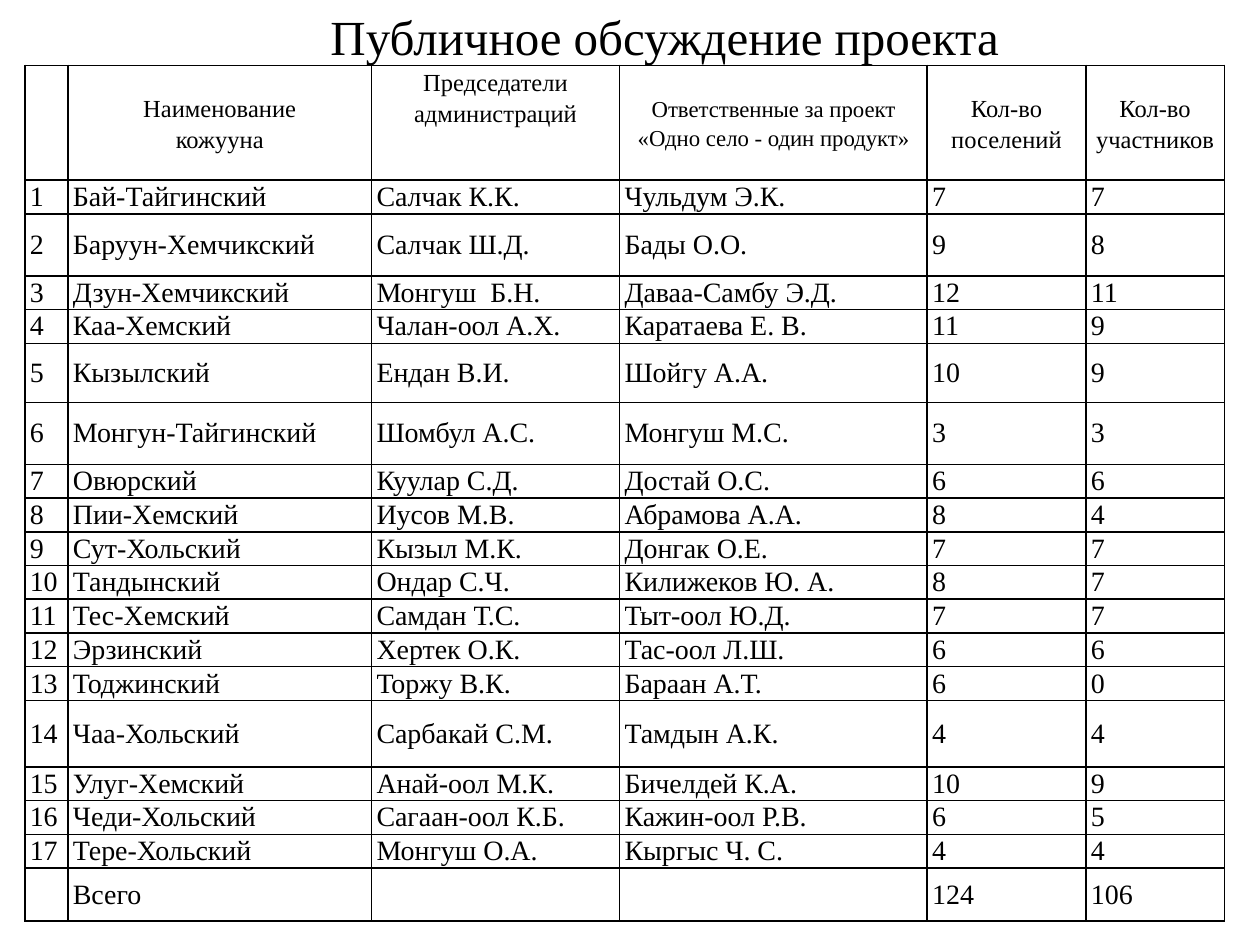
from typing import Any, NamedTuple

from lxml import etree
from pptx import Presentation
from pptx.dml.color import RGBColor
from pptx.enum.text import MSO_ANCHOR, PP_ALIGN
from pptx.oxml.ns import qn
from pptx.util import Cm, Pt

BLACK = RGBColor(0, 0, 0)
FACE = "Times New Roman"
TOP, MIDDLE = MSO_ANCHOR.TOP, MSO_ANCHOR.MIDDLE
LEFT, CENTER = PP_ALIGN.LEFT, PP_ALIGN.CENTER
SIDES = ("a:lnL", "a:lnR", "a:lnT", "a:lnB")

WIDTHS = (0.87, 6.12, 5, 6.2, 3.2, 2.79)
HEAD_H, ROW_H, TOTAL_H = 2.31, 0.68, 1.07
TALL = {2: 1.25, 5: 1.19, 6: 1.25, 14: 1.34}


class Head(NamedTuple):
    text: str
    size: int = 14
    anchor: MSO_ANCHOR = MIDDLE


class Area(NamedTuple):
    name: str
    chair: str
    lead: str
    towns: int
    people: int


HEADS = (
    Head(""),
    Head("Наименование\nкожууна"),
    Head("Председатели администраций", anchor=TOP),
    Head("Ответственные за проект «Одно село - один продукт»", 13),
    Head("Кол-во\nпоселений"),
    Head("Кол-во\nучастников"),
)
AREAS = (
    Area("Бай-Тайгинский", "Салчак К.К.", "Чульдум Э.К.", 7, 7),
    Area("Баруун-Хемчикский", "Салчак Ш.Д.", "Бады О.О.", 9, 8),
    Area("Дзун-Хемчикский", "Монгуш  Б.Н.", "Даваа-Самбу Э.Д.", 12, 11),
    Area("Каа-Хемский", "Чалан-оол А.Х.", "Каратаева Е. В.", 11, 9),
    Area("Кызылский", "Ендан В.И.", "Шойгу А.А.", 10, 9),
    Area("Монгун-Тайгинский", "Шомбул А.С.", "Монгуш М.С.", 3, 3),
    Area("Овюрский", "Куулар С.Д.", "Достай О.С.", 6, 6),
    Area("Пии-Хемский", "Иусов М.В.", "Абрамова А.А.", 8, 4),
    Area("Сут-Хольский", "Кызыл М.К.", "Донгак О.Е.", 7, 7),
    Area("Тандынский", "Ондар С.Ч.", "Килижеков Ю. А.", 8, 7),
    Area("Тес-Хемский", "Самдан Т.С.", "Тыт-оол Ю.Д.", 7, 7),
    Area("Эрзинский", "Хертек О.К.", "Тас-оол Л.Ш.", 6, 6),
    Area("Тоджинский", "Торжу В.К.", "Бараан А.Т.", 6, 0),
    Area("Чаа-Хольский", "Сарбакай С.М.", "Тамдын А.К.", 4, 4),
    Area("Улуг-Хемский", "Анай-оол М.К.", "Бичелдей К.А.", 10, 9),
    Area("Чеди-Хольский", "Сагаан-оол К.Б.", "Кажин-оол Р.В.", 6, 5),
    Area("Тере-Хольский", "Монгуш О.А.", "Кыргыс Ч. С.", 4, 4),
)
TOTAL = Area("Всего", "", "", 124, 106)


def assign(item: Any, values: dict[str, Any]) -> None:
    for key, value in values.items():
        setattr(item, key, value)


def write(frame: Any, text: str, size: int, align: PP_ALIGN, gap: float = 1) -> None:
    """Fill a text frame, one paragraph for each line of the text."""
    frame.text = text
    for para in frame.paragraphs:
        assign(para, {"alignment": align, "line_spacing": gap})
        assign(para.font, {"name": FACE, "size": Pt(size)})
        for run in para.runs:
            assign(run.font, {"name": FACE, "size": Pt(size), "bold": False})
            run.font.color.rgb = BLACK


def outline(cell: Any) -> None:
    props = cell._tc.get_or_add_tcPr()
    for side in SIDES:
        line = etree.SubElement(props, qn(side), w=str(Pt(1)))
        fill = etree.SubElement(line, qn("a:solidFill"))
        etree.SubElement(fill, qn("a:srgbClr"), val=str(BLACK))


def dress(cell: Any, anchor: MSO_ANCHOR, side: float) -> None:
    """Set a cell's insets, anchor, borders and fill."""
    assign(cell, {
        "vertical_anchor": anchor,
        "margin_left": Cm(side), "margin_right": Cm(side),
        "margin_top": 0, "margin_bottom": 0,
    })
    outline(cell)
    cell.fill.background()


def add_title(slide: Any) -> None:
    title = slide.shapes.title
    assign(title, {"left": Cm(2.9), "top": 0, "width": Cm(21), "height": Cm(1.45)})
    title.text_frame.vertical_anchor = TOP
    write(title.text_frame, "Публичное обсуждение проекта", 28, CENTER)


def add_areas(slide: Any) -> None:
    rows = [(i, *area) for i, area in enumerate(AREAS, 1)] + [("", *TOTAL)]
    tall = [TALL.get(i, ROW_H) for i in range(1, len(AREAS) + 1)]
    heights = [HEAD_H, *tall, TOTAL_H]
    table = slide.shapes.add_table(
        len(heights), len(WIDTHS), Cm(0.5), Cm(1.32),
        Cm(sum(WIDTHS)), Cm(sum(heights))).table
    assign(table, {"first_row": False, "horz_banding": False})
    for col, width in zip(table.columns, WIDTHS):
        col.width = Cm(width)
    for row, height in zip(table.rows, heights):
        row.height = Cm(height)

    for c, head in enumerate(HEADS):
        cell = table.cell(0, c)
        write(cell.text_frame, head.text, head.size, CENTER, 1.15)
        dress(cell, head.anchor, 0)
    for r, values in enumerate(rows, 1):
        for c, value in enumerate(values):
            cell = table.cell(r, c)
            write(cell.text_frame, str(value), 16, LEFT)
            dress(cell, MIDDLE, 0.1)


def main() -> None:
    deck = Presentation()
    assign(deck, {"slide_width": Cm(25.4), "slide_height": Cm(19.05)})
    slide = deck.slides.add_slide(deck.slide_layouts.get_by_name("Title Only"))
    add_title(slide)
    add_areas(slide)
    deck.save("out.pptx")


if __name__ == "__main__":
    main()
